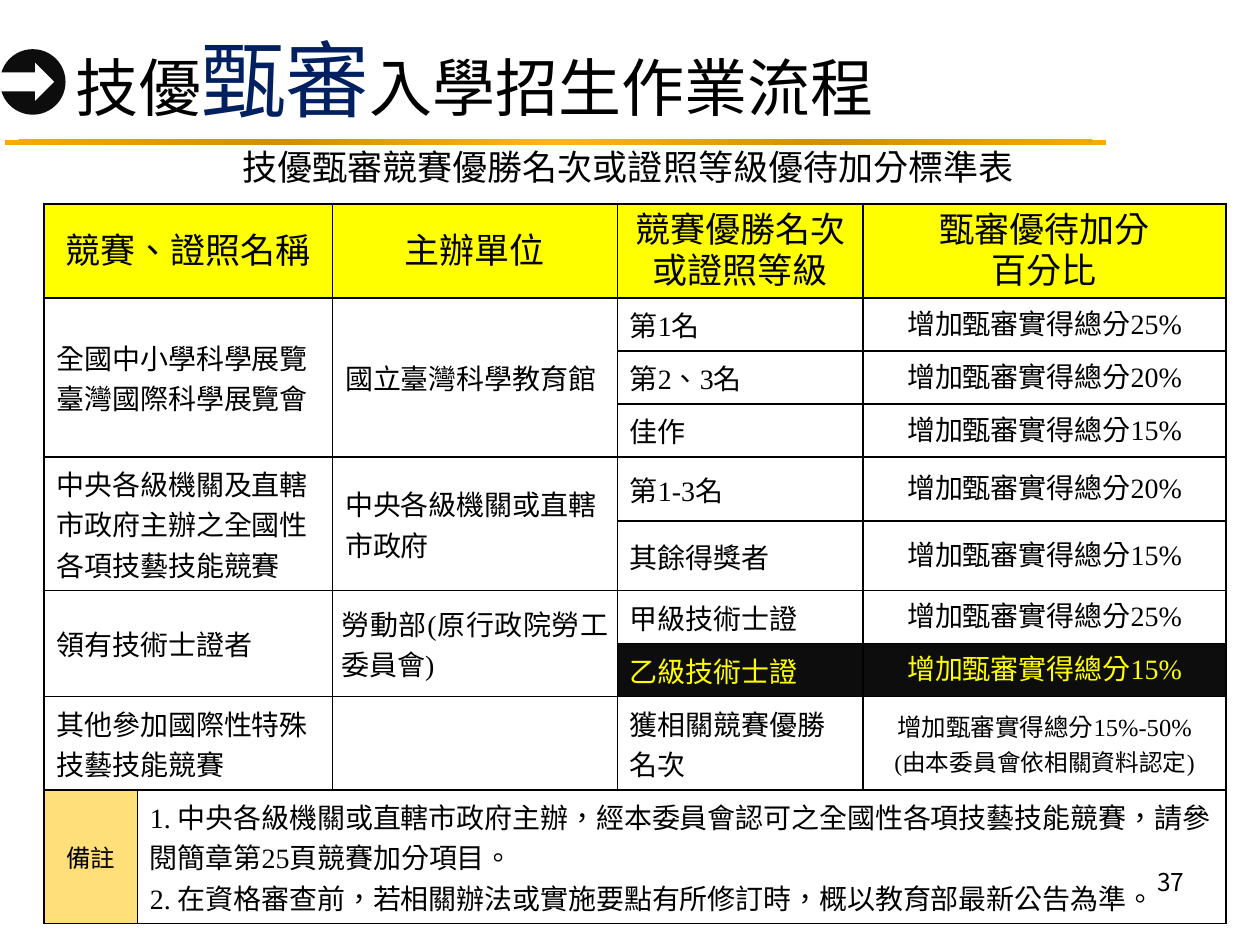
from lxml.etree import SubElement
from pptx import Presentation
from pptx.dml.color import RGBColor
from pptx.enum.shapes import MSO_SHAPE
from pptx.enum.text import MSO_ANCHOR, MSO_AUTO_SIZE, PP_ALIGN
from pptx.oxml import parse_xml
from pptx.oxml.ns import nsdecls, qn
from pptx.util import Inches, Pt

COLORS = {
    "black": "000000", "white": "FFFFFF", "navy": "002060", "yellow": "FFFF00",
    "ink": "0D0D0D", "note": "FFDF79",
    "gold": "FFB41D", "dark_gold": "D09000", "amber": "F7AB00",
}
CJK, SERIF = "Noto Sans CJK SC", "Times New Roman"
COLUMNS = [0.74, 1.55, 2.26, 1.95, 2.88]
ROWS = [0.55, 0.31, 0.31, 0.31, 0.51, 0.51, 0.31, 0.31, 0.57, 0.85]
HEADERS = {0: "競賽、證照名稱", 2: "主辦單位",
           3: "競賽優勝名次\n或證照等級", 4: "甄審優待加分\n百分比"}
GROUPS = [
    (1, 3, "全國中小學科學展覽\n臺灣國際科學展覽會", "國立臺灣科學教育館"),
    (4, 2, "中央各級機關及直轄市政府主辦之全國性各項技藝技能競賽", "中央各級機關或直轄市政府"),
    (6, 2, "領有技術士證者", "勞動部(原行政院勞工委員會)"),
    (8, 1, "其他參加國際性特殊技藝技能競賽", ""),
]
AWARDS = [("第1名", 25), ("第2、3名", 20), ("佳作", 15), ("第1-3名", 20),
          ("其餘得獎者", 15), ("甲級技術士證", 25), ("乙級技術士證", 15)]
HIGHLIGHT_ROW = 7
NOTES = ("1. 中央各級機關或直轄市政府主辦，經本委員會認可之全國性各項技藝技能競賽，請參閱簡章第25頁競賽加分項目。\n"
         "2. 在資格審查前，若相關辦法或實施要點有所修訂時，概以教育部最新公告為準。")


def rgb(name):
    return RGBColor.from_string(COLORS[name])


def style_run(run, size, color="black", face=CJK):
    run.font.size = Pt(size)
    run.font.name = face
    run.font.color.rgb = rgb(color)
    properties = run._r.get_or_add_rPr()
    properties.set("lang", "zh-TW")
    east_asian = SubElement(properties, qn("a:ea"))
    east_asian.set("typeface", CJK)


def add_solid(slide, kind, box, color):
    solid = slide.shapes.add_shape(kind, *map(Inches, box))
    solid.shadow.inherit = False
    solid.fill.solid()
    solid.fill.fore_color.rgb = rgb(color)
    solid.line.fill.background()
    return solid


def add_rule(slide, box):
    rule = add_solid(slide, MSO_SHAPE.RECTANGLE, box, "gold")
    stops = "".join(
        f'<a:gs pos="{position}"><a:srgbClr val="{COLORS[color]}"/></a:gs>'
        for position, color in [(0, "gold"), (50000, "dark_gold"), (100000, "amber")])
    gradient = parse_xml(
        f'<a:gradFill {nsdecls("a")} rotWithShape="1"><a:gsLst>{stops}</a:gsLst>'
        '<a:path path="circle"><a:fillToRect l="50000" t="50000" r="50000" b="50000"/>'
        '</a:path></a:gradFill>')
    properties = rule._element.spPr
    properties.replace(properties.find(qn("a:solidFill")), gradient)


def add_title(slide, box):
    title = slide.shapes.title
    title.left, title.top, title.width, title.height = map(Inches, box)
    frame = title.text_frame
    frame.auto_size = MSO_AUTO_SIZE.NONE
    frame.vertical_anchor = MSO_ANCHOR.MIDDLE
    heading = frame.paragraphs[0]
    heading.alignment = PP_ALIGN.LEFT
    for words, size, color in [("技優", 36, "black"), ("甄審", 48, "navy"),
                               ("入學招生作業流程", 36, "black")]:
        run = heading.add_run()
        run.text = words
        style_run(run, size, color)


def add_label(slide, box, words, size, align, anchor):
    frame = slide.shapes.add_textbox(*map(Inches, box)).text_frame
    frame.word_wrap = True
    frame.vertical_anchor = anchor
    frame.text = words
    frame.paragraphs[0].alignment = align
    style_run(frame.paragraphs[0].runs[0], size)


def add_arrow_badge(slide, left, top, size):
    add_solid(slide, MSO_SHAPE.OVAL, (left, top, size, size), "ink")
    add_solid(slide, MSO_SHAPE.RIGHT_ARROW, (left, top + 0.11, 0.43, 0.3), "white")


def border(cell):
    properties = cell._tc.get_or_add_tcPr()
    for index, side in enumerate(("lnL", "lnR", "lnT", "lnB")):
        properties.insert(index, parse_xml(
            f'<a:{side} {nsdecls("a")} w="12700"><a:solidFill>'
            f'<a:srgbClr val="{COLORS["black"]}"/></a:solidFill></a:{side}>'))


def fill_cell(cell, words, size=16, color="black", fill="white",
              align=PP_ALIGN.LEFT, spacing=None):
    cell.fill.solid()
    cell.fill.fore_color.rgb = rgb(fill)
    cell.vertical_anchor = MSO_ANCHOR.MIDDLE
    cell.text_frame.text = words
    for paragraph in cell.text_frame.paragraphs:
        paragraph.alignment = align
        if spacing:
            paragraph.line_spacing = spacing
        for run in paragraph.runs:
            style_run(run, size, color, SERIF)


def add_bonus_table(slide, box):
    table = slide.shapes.add_table(len(ROWS), len(COLUMNS), *map(Inches, box)).table
    for column, width in zip(table.columns, COLUMNS):
        column.width = Inches(width)
    for row, height in zip(table.rows, ROWS):
        row.height = Inches(height)
    for cell in table.iter_cells():
        fill_cell(cell, "")
        border(cell)

    table.cell(0, 0).merge(table.cell(0, 1))
    for column, words in HEADERS.items():
        fill_cell(table.cell(0, column), words, 20, fill="yellow",
                  align=PP_ALIGN.CENTER, spacing=0.8)

    for first, count, contest, organizer in GROUPS:
        last = first + count - 1
        table.cell(first, 0).merge(table.cell(last, 1))
        if count > 1:
            table.cell(first, 2).merge(table.cell(last, 2))
        fill_cell(table.cell(first, 0), contest)
        fill_cell(table.cell(first, 2), organizer)
    labor = table.cell(6, 2)
    labor.margin_left = labor.margin_right = Inches(0.07)
    labor.margin_top = labor.margin_bottom = 0
    labor.text_frame.paragraphs[0].alignment = PP_ALIGN.JUSTIFY

    for row, (award, percent) in enumerate(AWARDS, 1):
        color, fill = ("yellow", "ink") if row == HIGHLIGHT_ROW else ("black", "white")
        fill_cell(table.cell(row, 3), award, color=color, fill=fill)
        fill_cell(table.cell(row, 4), f"增加甄審實得總分{percent}%", color=color,
                  fill=fill, align=PP_ALIGN.CENTER, spacing=0.8)

    fill_cell(table.cell(8, 3), "獲相關競賽優勝名次")
    special = table.cell(8, 4)
    fill_cell(special, "增加甄審實得總分15%-50%\n(由本委員會依相關資料認定)", 14,
              align=PP_ALIGN.CENTER)
    committee = special.text_frame.paragraphs[1].runs[0]
    committee.font.size = Pt(13.5)
    committee._r.get_or_add_rPr().set("spc", "10")

    table.cell(9, 1).merge(table.cell(9, 4))
    fill_cell(table.cell(9, 0), "備註", 14, fill="note", align=PP_ALIGN.CENTER)
    fill_cell(table.cell(9, 1), NOTES)


def main():
    presentation = Presentation()
    presentation.slide_width, presentation.slide_height = Inches(10), Inches(7.5)
    slide = presentation.slides.add_slide(presentation.slide_layouts[5])
    add_rule(slide, (0.04, 1.11, 8.74, 0.04))
    add_bonus_table(slide, (0.35, 1.62, 9.37, 5.03))
    add_title(slide, (0.5, 0.3, 9, 0.64))
    add_label(slide, (7.17, 6.83, 2.33, 0.52), "37", 14, PP_ALIGN.RIGHT, MSO_ANCHOR.TOP)
    add_arrow_badge(slide, 0, 0.39, 0.52)
    add_label(slide, (0.39, 0.99, 9.19, 0.67), "技優甄審競賽優勝名次或證照等級優待加分標準表",
              20, PP_ALIGN.CENTER, MSO_ANCHOR.MIDDLE)
    presentation.save("out.pptx")


if __name__ == "__main__":
    main()
